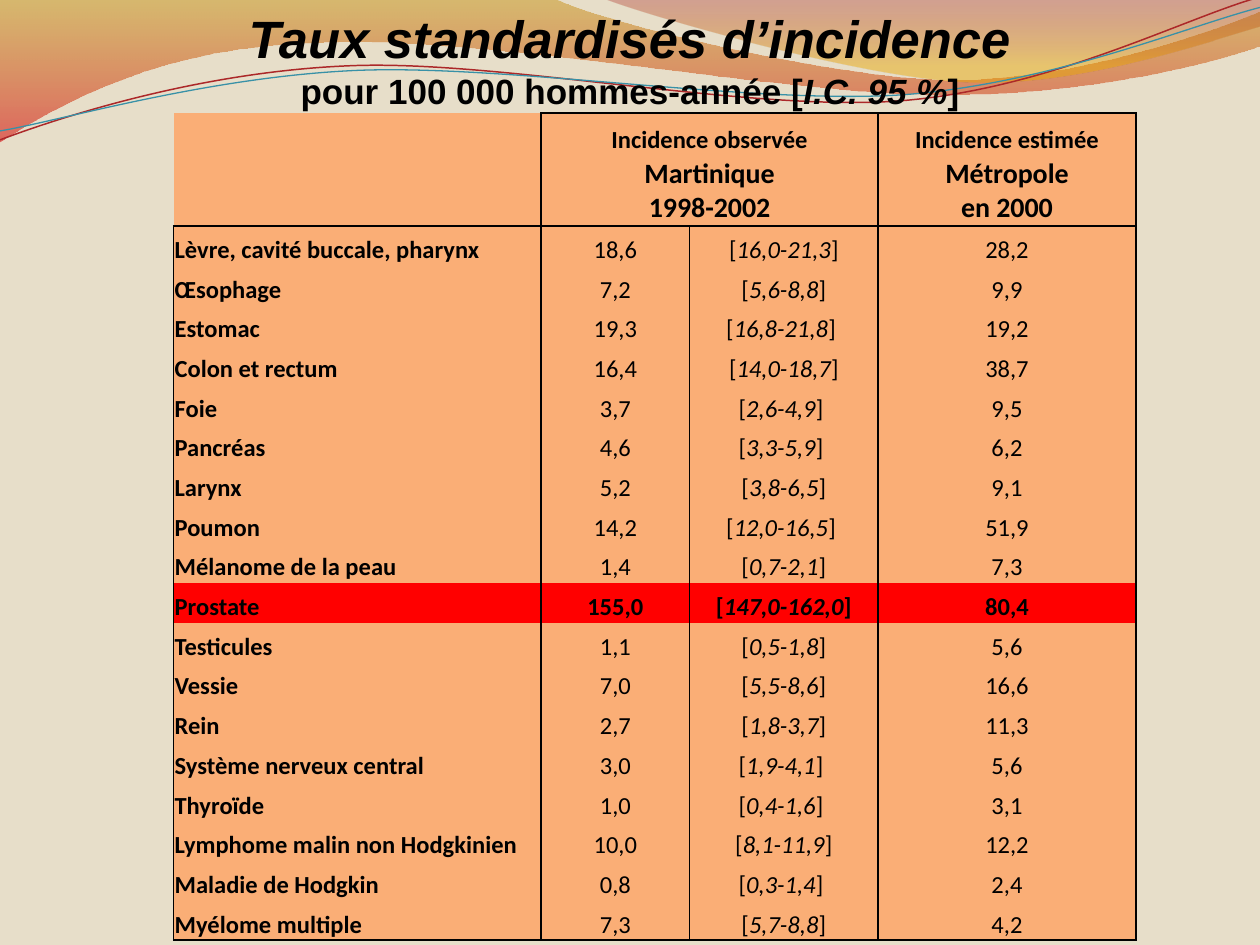
from lxml import etree
from pptx import Presentation
from pptx.dml.color import RGBColor
from pptx.enum import text
from pptx.oxml import ns
from pptx.util import Cm, Pt

SAND = RGBColor(0xE7, 0xDE, 0xC9)
PEACH = RGBColor(0xFA, 0xAE, 0x76)
RED = RGBColor(0xFF, 0x00, 0x00)
BLACK = RGBColor(0x00, 0x00, 0x00)
OCHRE = RGBColor(0xC3, 0x8B, 0x00)
SCARLET = RGBColor(0xD6, 0x03, 0x05)
MAROON = RGBColor(0xA1, 0x11, 0x12)
AMBER = RGBColor(0xE9, 0xA6, 0x00)
LINE_RED = RGBColor(0xAC, 0x28, 0x29)
LINE_BLUE = RGBColor(0x38, 0x91, 0xA7)

NO_GRID_STYLE = "{2D5ABB26-0587-4C30-8999-92F81FD0307C}"
COLUMN_WIDTHS = (7.41, 2.99, 3.8, 5.2)
HEADER_HEIGHT = 0.86
ROW_HEIGHT = 0.8
TABLE_HEIGHT = 16.64
HIGHLIGHT = "Prostate"
HEADERS = (
    (1, "Incidence observée", ("Martinique", "1998-2002")),
    (3, "Incidence estimée", ("Métropole", "en 2000")),
)
RATES = (
    ("Lèvre, cavité buccale, pharynx", "18,6", "[16,0-21,3]", "28,2"),
    ("Œsophage", "7,2", "[5,6-8,8]", "9,9"),
    ("Estomac", "19,3", "[16,8-21,8] ", "19,2"),
    ("Colon et rectum", "16,4", "[14,0-18,7]", "38,7"),
    ("Foie", "3,7", "[2,6-4,9] ", "9,5"),
    ("Pancréas", "4,6", "[3,3-5,9] ", "6,2"),
    ("Larynx", "5,2", "[3,8-6,5]", "9,1"),
    ("Poumon", "14,2", "[12,0-16,5] ", "51,9"),
    ("Mélanome de la peau", "1,4", "[0,7-2,1]", "7,3"),
    ("Prostate", "155,0", "[147,0-162,0]", "80,4"),
    ("Testicules", "1,1", "[0,5-1,8]", "5,6"),
    ("Vessie", "7,0", "[5,5-8,6]", "16,6"),
    ("Rein", "2,7", "[1,8-3,7]", "11,3"),
    ("Système nerveux central", "3,0", "[1,9-4,1] ", "5,6"),
    ("Thyroïde", "1,0", "[0,4-1,6] ", "3,1"),
    ("Lymphome malin non Hodgkinien", "10,0", "[8,1-11,9]", "12,2"),
    ("Maladie de Hodgkin", "0,8", "[0,3-1,4] ", "2,4"),
    ("Myélome multiple", "7,3", "[5,7-8,8]", "4,2"),
)

# Each outline is a start point, then line ends (2 numbers) and Bézier curves (6), in cm.
WIDE_WAVE = (
    (0, -0.03), (11.18, -0.03),
    (12.09, 0.43, 16.87, 1.6, 19.25, 1.6), (21.67, 1.6, 24.33, 0.66, 25.4, 0.23),
    (25.43, 0.91),
    (24.97, 1.12, 22.1, 1.93, 18.95, 1.91), (15.8, 1.91, 9.7, 0.71, 6.53, 0.86),
    (3.28, 0.89, 1.17, 2.11, -0.03, 2.87), (0, -0.03),
)
RIGHT_WAVE = (
    (12.17, -0.03),
    (12.93, 0.28, 17.32, 1.57, 19.53, 1.65), (21.74, 1.75, 24.41, 0.81, 25.4, 0.53),
    (25.4, 0), (12.17, -0.03),
)
RED_CURVE = (
    (-0.05, 2.22), (1.19, 1.82, 4.02, 1.04, 7.05, 1.06),
    (10.05, 1.07, 15.02, 2.37, 18.08, 2.29), (21.13, 2.2, 23.87, 0.91, 25.41, 0.55),
)
BLUE_CURVE = (
    (-0.04, 2.04), (1.16, 1.9, 4.18, 1.15, 7.2, 1.16),
    (10.25, 1.18, 15.13, 2.23, 18.18, 2.17), (21.21, 2.08, 23.96, 1.06, 25.45, 0.75),
)


def add_outline(slide, outline, close):
    """Build a freeform on the segment ends, then bend its curved segments."""
    ends = [(Cm(segment[-2]), Cm(segment[-1])) for segment in outline]
    builder = slide.shapes.build_freeform(*ends[0])
    builder.add_line_segments(ends[1:], close=close)
    shape = builder.convert_to_shape()
    shape.shadow.inherit = False
    lines = list(shape.element.spPr.iter(ns.qn("a:lnTo")))
    for line, segment in zip(lines, outline[1:]):
        if len(segment) == 6:
            line.tag = ns.qn("a:cubicBezTo")
            for index, (x, y) in enumerate((segment[:2], segment[2:4])):
                point = etree.Element(ns.qn("a:pt"), x=str(Cm(x) - shape.left),
                                      y=str(Cm(y) - shape.top))
                line.insert(index, point)
    return shape


def add_wave(slide, outline, stops):
    """Add a closed shape with a downward gradient of (position, colour, opacity %)."""
    shape = add_outline(slide, outline, close=True)
    shape.line.fill.background()
    shape.fill.gradient()
    shape.fill.gradient_angle = 270
    for stop, (position, color, _) in zip(shape.fill.gradient_stops, stops):
        stop.position = position
        stop.color.rgb = color
    colors = shape.element.spPr.iter(ns.qn("a:srgbClr"))
    for element, (_, _, opacity) in zip(colors, stops):
        etree.SubElement(element, ns.qn("a:alpha"), val=str(opacity * 1000))


def add_curve(slide, outline, color, width):
    shape = add_outline(slide, outline, close=False)
    shape.rotation = 357.3
    shape.fill.background()
    shape.line.color.rgb = color
    shape.line.width = Pt(width)


def write(paragraph, content, size=14, font="Calibri", bold=False, italic=False, center=True):
    run = paragraph.add_run()
    run.text = content
    run.font.size = Pt(size)
    run.font.name = font
    run.font.bold = bold
    run.font.italic = italic
    run.font.color.rgb = BLACK
    paragraph.alignment = text.PP_ALIGN.CENTER if center else text.PP_ALIGN.LEFT


def format_cell(cell, fill, sides):
    """Set margins, fill and black borders; sides holds letters of "LRTB"."""
    cell.margin_left = cell.margin_right = cell.margin_top = Cm(0.02)
    cell.margin_bottom = Cm(0.01)
    cell.vertical_anchor = text.MSO_ANCHOR.BOTTOM
    properties = cell._tc.get_or_add_tcPr()
    for side in "LRTB":
        border = etree.SubElement(properties, ns.qn(f"a:ln{side}"), w=str(Pt(1)))
        if side in sides:
            solid = etree.SubElement(border, ns.qn("a:solidFill"))
            etree.SubElement(solid, ns.qn("a:srgbClr"), val=str(BLACK))
        else:
            etree.SubElement(border, ns.qn("a:noFill"))
    cell.fill.solid()
    cell.fill.fore_color.rgb = fill


def fill_header(table):
    for column in range(len(COLUMN_WIDTHS)):
        format_cell(table.cell(0, column), PEACH, "LRT" if column else "R")
        format_cell(table.cell(1, column), PEACH, "LRB" if column else "RB")
    for row in range(2):
        table.cell(row, 1).merge(table.cell(row, 2))
    for column, heading, (place, period) in HEADERS:
        write(table.cell(0, column).text_frame.paragraphs[0], heading, bold=True)
        frame = table.cell(1, column).text_frame
        write(frame.paragraphs[0], place, size=16, bold=True)
        write(frame.add_paragraph(), period, size=16, bold=True)


def fill_row(table, row, rates):
    site, observed, interval, estimated = rates
    strong = site == HIGHLIGHT
    sides = {2: "LRT", len(RATES) + 1: "LRB"}.get(row, "LR")
    cells = [table.cell(row, column) for column in range(len(rates))]
    for cell in cells:
        format_cell(cell, RED if strong else PEACH, sides)
    paragraphs = [cell.text_frame.paragraphs[0] for cell in cells]
    write(paragraphs[0], site, bold=True, center=False)
    write(paragraphs[1], observed, bold=strong)
    end = interval.index("]")
    for part, italic in (("[", False), (interval[1:end], True), (interval[end:], False)):
        write(paragraphs[2], part, bold=strong, italic=italic)
    write(paragraphs[3], estimated, bold=strong)


def add_rates_table(slide):
    heights = (HEADER_HEIGHT,) * 2 + (ROW_HEIGHT,) * len(RATES)
    frame = slide.shapes.add_table(len(heights), len(COLUMN_WIDTHS), Cm(3.5), Cm(2.28),
                                   Cm(sum(COLUMN_WIDTHS)), Cm(TABLE_HEIGHT))
    table = frame.table
    table._tbl.tblPr.find(ns.qn("a:tableStyleId")).text = NO_GRID_STYLE
    table.first_row = table.horz_banding = False
    for column, width in zip(table.columns, COLUMN_WIDTHS):
        column.width = Cm(width)
    for row, height in zip(table.rows, heights):
        row.height = Cm(height)
    frame.height = Cm(TABLE_HEIGHT)
    fill_header(table)
    for row, rates in enumerate(RATES, start=2):
        fill_row(table, row, rates)


def add_title(slide):
    frame = slide.shapes.add_textbox(Cm(2.9), 0, Cm(19.6), Cm(2.38)).text_frame
    frame.word_wrap = True
    frame.auto_size = text.MSO_AUTO_SIZE.SHAPE_TO_FIT_TEXT
    write(frame.paragraphs[0], "Taux standardisés d’incidence",
          size=30, font="Arial", bold=True, italic=True)
    subtitle = frame.add_paragraph()
    for part, italic in (("pour 100 000 hommes-année [", False), ("I.C. 95 %", True), ("]", False)):
        write(subtitle, part, size=20, font="Arial", bold=True, italic=italic)


def main():
    presentation = Presentation()
    presentation.slide_width, presentation.slide_height = Cm(25.4), Cm(19.05)
    slide = presentation.slides.add_slide(presentation.slide_layouts[6])
    slide.background.fill.solid()
    slide.background.fill.fore_color.rgb = SAND
    add_wave(slide, WIDE_WAVE, ((0, OCHRE, 45), (1, SCARLET, 55)))
    add_wave(slide, RIGHT_WAVE, ((0, MAROON, 30), (0.8, AMBER, 45)))
    add_curve(slide, RED_CURVE, LINE_RED, 0.85)
    add_curve(slide, BLUE_CURVE, LINE_BLUE, 0.75)
    add_rates_table(slide)
    add_title(slide)
    presentation.save("out.pptx")


if __name__ == "__main__":
    main()
